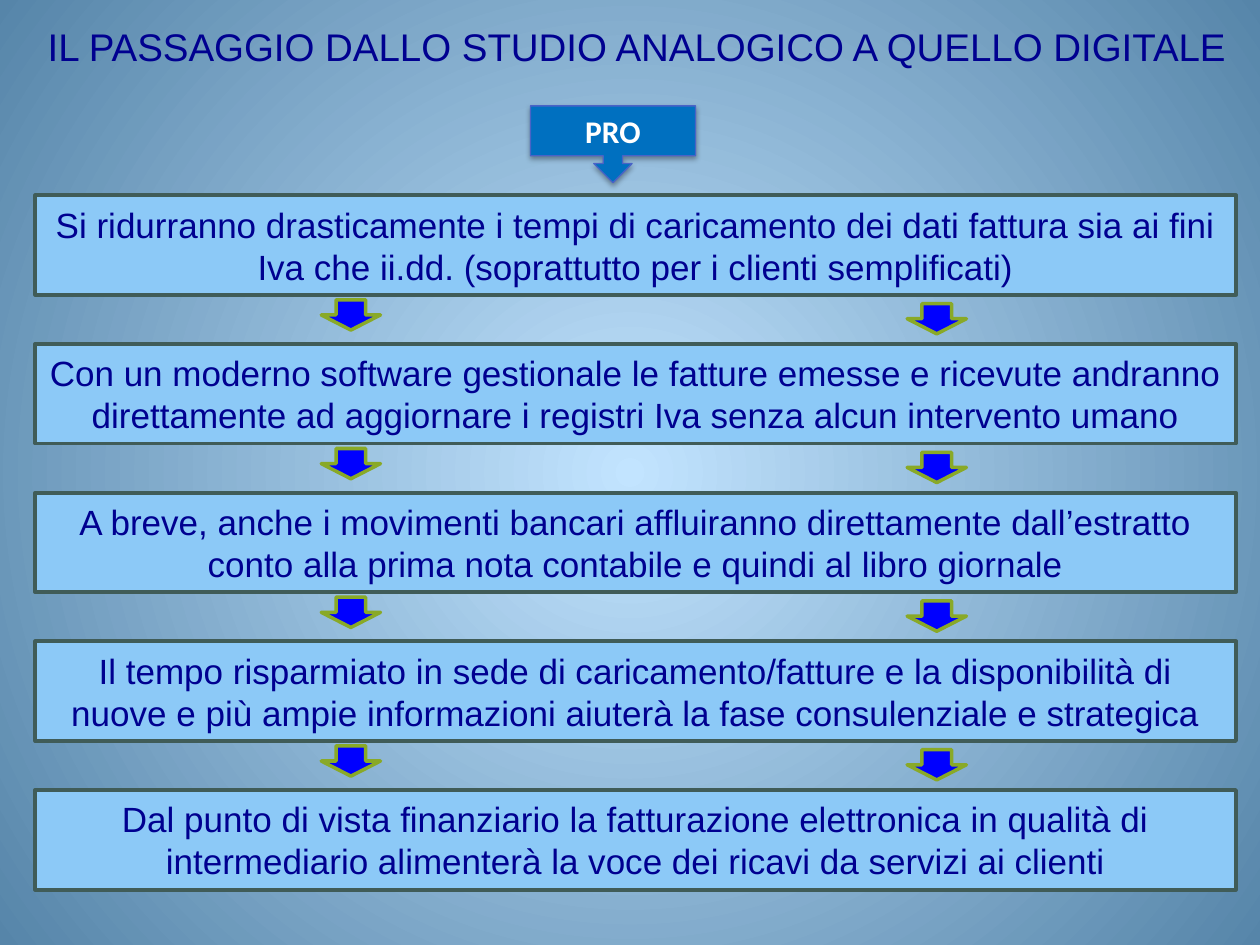
from lxml import etree
from pptx import Presentation
from pptx import util as u
from pptx.dml.color import RGBColor
from pptx.enum import shapes, text
from pptx.oxml import parse_xml
from pptx.oxml.ns import nsdecls, qn

theme = {
    "glow": "C2E4FF", "edge": "5685A9",
    "ink": "000090", "box": "8CC9F7", "frame": "405C58",
    "arrow": "0000FF", "rim": "89A927",
    "tag": "0070C0", "trim": "4963C7", "white": "FFFFFF",
    "font": "Arial", "bold": "Calibri",
    "title": 22, "body": 20, "label": 18,
}
steps = [
    "Si ridurranno drasticamente i tempi di caricamento dei dati fattura sia ai fini Iva che ii.dd. (soprattutto per i clienti semplificati)",
    "Con un moderno software gestionale le fatture emesse e ricevute andranno direttamente ad aggiornare i registri Iva senza alcun intervento umano",
    "A breve, anche i movimenti bancari affluiranno direttamente dall’estratto conto alla prima nota contabile e quindi al libro giornale",
    "Il tempo risparmiato in sede di caricamento/fatture e la disponibilità di nuove e più ampie informazioni aiuterà la fase consulenziale e strategica",
    "Dal punto di vista finanziario la fatturazione elettronica in qualità di intermediario alimenterà la voce dei ricavi da servizi ai clienti",
]
left, top, wide, high, pitch = 0.28, 1.55, 9.53, 0.79, 1.18
arrows = [(2.55, 0.83), (7.2, 0.86)]  # column, drop below the top of its row

deck = Presentation()
deck.slide_width, deck.slide_height = u.Inches(10), u.Inches(7.5)
slide = deck.slides.add_slide(deck.slide_layouts[6])


def draw(kind, area, fill, line, width):
    shape = slide.shapes.add_shape(kind, *map(u.Inches, area))
    shape.shadow.inherit = False
    shape.fill.solid()
    shape.fill.fore_color.rgb = RGBColor.from_string(theme[fill])
    shape.line.color.rgb = RGBColor.from_string(theme[line])
    shape.line.width = u.Pt(width)
    return shape


def write(shape, words, size, color="ink", font="font", align=text.PP_ALIGN.CENTER):
    frame = shape.text_frame
    frame.word_wrap = True
    frame.text = words
    para = frame.paragraphs[0]
    para.alignment = align
    face = para.runs[0].font
    face.name, face.size = theme[font], u.Pt(theme[size])
    face.color.rgb = RGBColor.from_string(theme[color])
    return para


# Radial background
back = slide.background.fill
back.gradient()
for stop, name in zip(back.gradient_stops, ("glow", "edge")):
    stop.color.rgb = RGBColor.from_string(theme[name])
grad = slide.background.fill._xPr.find(qn("a:gradFill"))
grad.remove(grad.find(qn("a:lin")))
grad.append(parse_xml(
    f'<a:path {nsdecls("a")} path="circle">'
    '<a:fillToRect l="50000" t="50000" r="50000" b="50000"/></a:path>'))

# Title
title = slide.shapes.add_textbox(*map(u.Inches, (left, 0.13, 9.61, 0.47)))
write(title, "IL PASSAGGIO DALLO STUDIO ANALOGICO A QUELLO DIGITALE", "title",
      align=text.PP_ALIGN.LEFT)

# Steps, with a pair of arrows between each two
for row, words in enumerate(steps):
    y = top + row * pitch
    box = draw(shapes.MSO_SHAPE.RECTANGLE, (left, y, wide, high), "box", "frame", 2.25)
    para = write(box, words, "body")
    para.line_spacing, para.space_before = u.Pt(24), u.Pt(4)
    if row < len(steps) - 1:
        for x, drop in arrows:
            draw(shapes.MSO_SHAPE.DOWN_ARROW, (x, y + drop, 0.47, 0.24), "arrow", "rim", 2)

# Heading tag with a soft shadow
tag = draw(shapes.MSO_SHAPE.DOWN_ARROW_CALLOUT, (4.21, 0.84, 1.31, 0.61), "tag", "trim", 0.75)
write(tag, "PRO", "label", "white", "bold").runs[0].font.bold = True
glow = etree.SubElement(
    tag._element.spPr.find(qn("a:effectLst")), qn("a:outerShdw"),
    blurRad=str(u.Pt(3.1)), dist=str(u.Pt(1.8)), dir="5400000", rotWithShape="0")
shade = etree.SubElement(glow, qn("a:srgbClr"), val="000000")
etree.SubElement(shade, qn("a:alpha"), val="35000")

deck.save("out.pptx")
